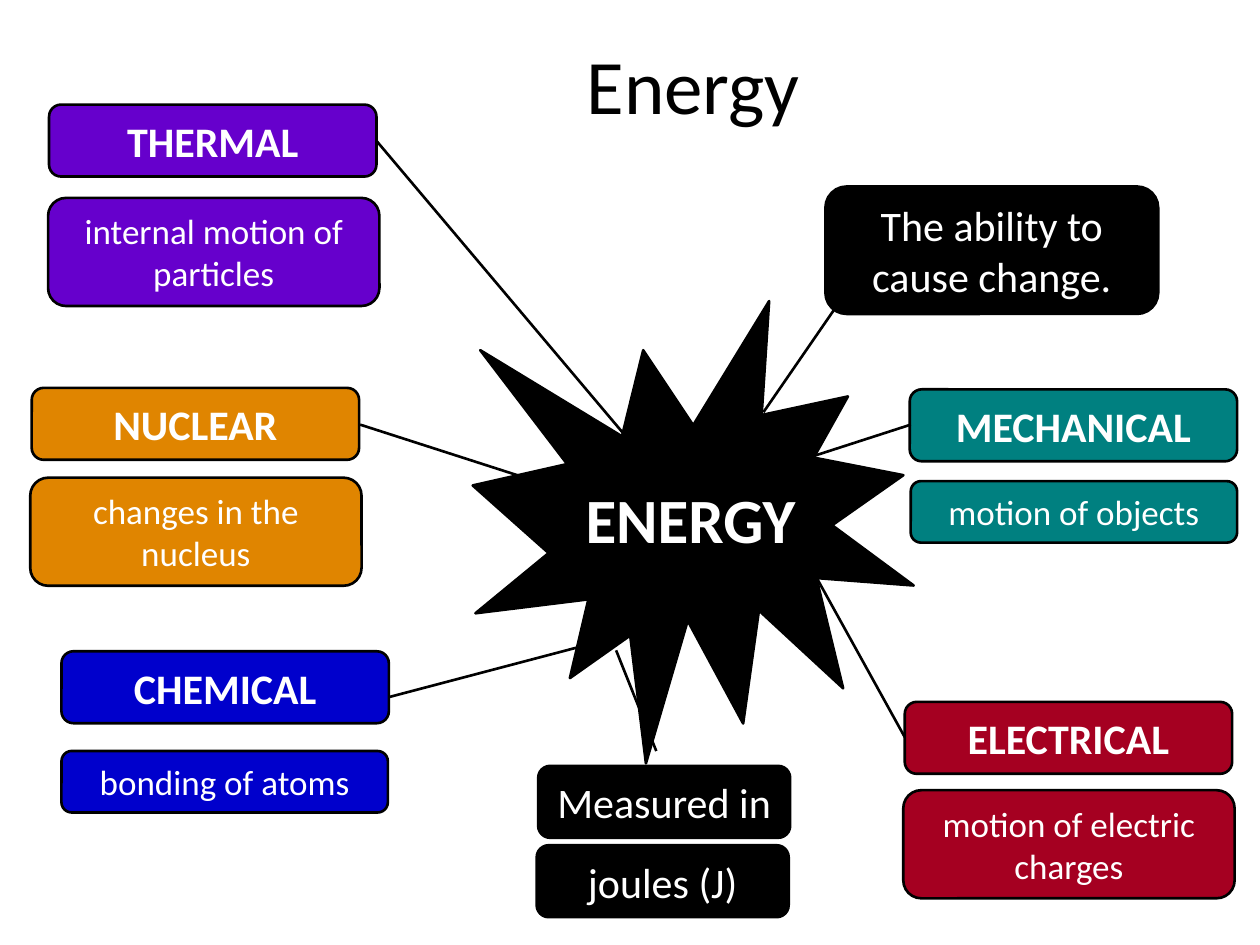
import pptx
import pptx.dml.color
import pptx.enum.shapes
import pptx.enum.text
import pptx.util

Cm = pptx.util.Cm
Pt = pptx.util.Pt
SHAPES = pptx.enum.shapes.MSO_SHAPE
FIT = pptx.enum.text.MSO_AUTO_SIZE
COLOURS = {
    "black": "000000",
    "white": "FFFFFF",
    "thermal": "6600CC",
    "nuclear": "E08500",
    "chemical": "0000CC",
    "mechanical": "008080",
    "electrical": "A50021",
}


def colour(name):
    return pptx.dml.color.RGBColor.from_string(COLOURS[name])


def write(box, text, size, ink="white", bold=False):
    """Put one centred line of text in the middle of the box."""
    frame = box.text_frame
    frame.word_wrap = True
    frame.vertical_anchor = pptx.enum.text.MSO_ANCHOR.MIDDLE
    para = frame.paragraphs[0]
    para.alignment = pptx.enum.text.PP_ALIGN.CENTER
    span = para.add_run()
    span.text = text
    span.font.name = "Calibri"
    span.font.size = Pt(size)
    span.font.bold = bold
    span.font.color.rgb = colour(ink)


deck = pptx.Presentation()
deck.slide_width = Cm(25.4)
deck.slide_height = Cm(19.05)
page = deck.slides.add_slide(deck.slide_layouts[6])

title = page.shapes.add_textbox(Cm(3.18), Cm(0.64), Cm(21.59), Cm(2.11))
write(title, "Energy", 44, ink="black")

# Burst in the middle
burst = page.shapes.add_shape(SHAPES.EXPLOSION1, Cm(9.53), Cm(6.07), Cm(8.89), Cm(9.32))
burst.shadow.inherit = False
burst.fill.solid()
burst.fill.fore_color.rgb = colour("black")
burst.line.color.rgb = colour("black")
burst.line.width = Pt(1.5)
write(burst, "ENERGY", 36, bold=True)
burst.text_frame.word_wrap = False

# Rounded boxes: text, fill, left, top, width, height, text size, bold
heading = (6.6, 1.45, 24, True)
two_lines = (6.68, 2.18, 20, False)
one_line = (6.58, 1.24, 20, False)
fact = (5.08, 1.45, 24, False)
boxes = [
    ("motion of electric charges", "electrical", 18.21, 15.93, *two_lines),
    ("bonding of atoms", "chemical", 1.24, 15.14, *one_line),
    ("motion of objects", "mechanical", 18.36, 9.7, *one_line),
    ("internal motion of particles", "thermal", 0.97, 3.99, *two_lines),
    ("changes in the nucleus", "nuclear", 0.61, 9.63, *two_lines),
    ("The ability to cause change.", "black", 16.64, 3.76, 6.71, 2.57, 24, False),
    ("MECHANICAL", "mechanical", 18.34, 7.85, *heading),
    ("ELECTRICAL", "electrical", 18.24, 14.15, *heading),
    ("CHEMICAL", "chemical", 1.24, 13.13, *heading),
    ("NUCLEAR", "nuclear", 0.64, 7.82, *heading),
    ("THERMAL", "thermal", 0.99, 2.11, *heading),
    ("joules (J)", "black", 10.82, 17.04, *fact),
    ("Measured in", "black", 10.85, 15.44, *fact),
]
for text, fill, left, top, width, height, size, bold in boxes:
    box = page.shapes.add_shape(
        SHAPES.ROUNDED_RECTANGLE, Cm(left), Cm(top), Cm(width), Cm(height)
    )
    box.shadow.inherit = False
    box.fill.solid()
    box.fill.fore_color.rgb = colour(fill)
    box.line.color.rgb = colour("black")
    box.line.width = Pt(1.5)
    write(box, text, size, bold=bold)
    box.text_frame.auto_size = FIT.SHAPE_TO_FIT_TEXT

# Spokes between the burst and the boxes
spokes = [
    (15.39, 8.31, 16.81, 6.25),
    (16.41, 9.19, 18.36, 8.56),
    (16.48, 11.68, 18.24, 14.86),
    (12.67, 12.78, 7.85, 14.05),
    (10.8, 9.7, 7.26, 8.56),
    (12.67, 8.86, 7.59, 2.84),
    (12.42, 13.11, 13.23, 15.14),
]
for ends in spokes:
    spoke = page.shapes.add_connector(
        pptx.enum.shapes.MSO_CONNECTOR.STRAIGHT, *[Cm(end) for end in ends]
    )
    spoke.line.color.rgb = colour("black")
    spoke.line.width = Pt(1.5)
    properties = spoke.element.spPr
    properties.append(properties.makeelement(pptx.oxml.ns.qn("a:effectLst"), {}))

deck.save("out.pptx")
